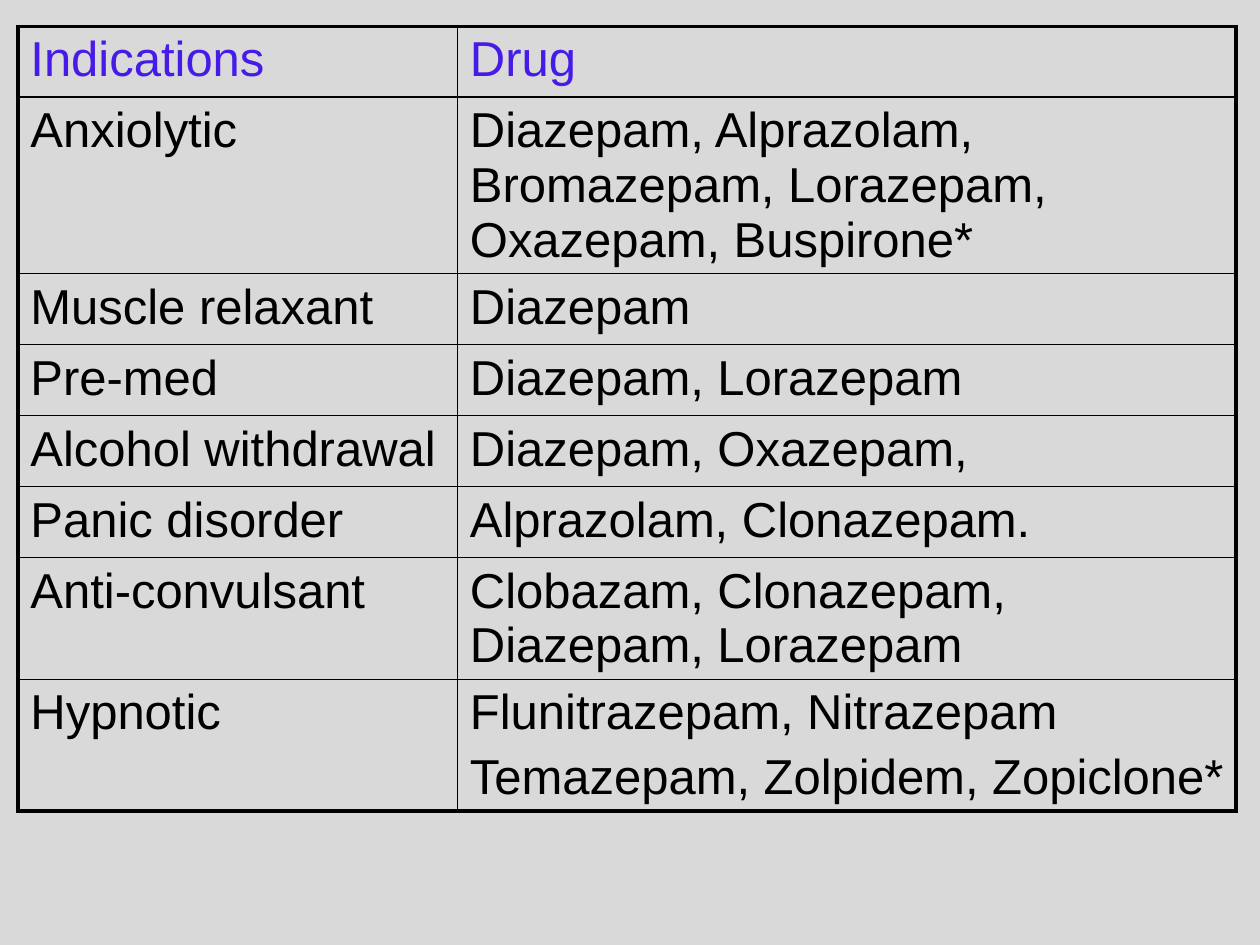
from lxml.etree import SubElement
from pptx import Presentation
from pptx.dml.color import RGBColor
from pptx.oxml.ns import qn
from pptx.util import Cm, Pt

GREY = RGBColor(0xD9, 0xD9, 0xD9)
BLACK = RGBColor(0, 0, 0)
VIOLET = RGBColor(0x47, 0x1B, 0xE7)
THIN, THICK = Pt(1), Pt(2.25)

ROWS = [
    ("Indications", "Drug"),
    ("Anxiolytic", "Diazepam, Alprazolam, Bromazepam, Lorazepam, Oxazepam, Buspirone*"),
    ("Muscle relaxant", "Diazepam"),
    ("Pre-med", "Diazepam, Lorazepam"),
    ("Alcohol withdrawal", "Diazepam, Oxazepam,"),
    ("Panic disorder", "Alprazolam, Clonazepam."),
    ("Anti-convulsant", "Clobazam, Clonazepam, Diazepam, Lorazepam"),
    ("Hypnotic", "Flunitrazepam, Nitrazepam\nTemazepam, Zolpidem, Zopiclone*"),
]
COL_WIDTHS = [Cm(8.86), Cm(15.7)]
ROW_HEIGHT = Cm(1.43)


def add_border(cell, side, width):
    """Draw one side (L, R, T or B, called in that order) of a cell."""
    ln = SubElement(cell._tc.get_or_add_tcPr(), qn(f"a:ln{side}"), w=str(width))
    fill = SubElement(ln, qn("a:solidFill"))
    SubElement(fill, qn("a:srgbClr"), val=str(BLACK))


prs = Presentation()
prs.slide_width, prs.slide_height = Cm(25.4), Cm(19.05)
s = prs.slides.add_slide(prs.slide_layouts[6])
s.background.fill.solid()
s.background.fill.fore_color.rgb = GREY

table = s.shapes.add_table(len(ROWS), len(COL_WIDTHS), Cm(0.36), Cm(0.53),
                           sum(COL_WIDTHS), ROW_HEIGHT * len(ROWS)).table
table.first_row = False
table.horz_banding = False
for column, width in zip(table.columns, COL_WIDTHS):
    column.width = width

for i, texts in enumerate(ROWS):
    table.rows[i].height = ROW_HEIGHT
    for j, text in enumerate(texts):
        cell = table.cell(i, j)
        cell.text_frame.text = text
        for p in cell.text_frame.paragraphs:
            p.space_before = Pt(5.6)
            for r in p.runs:
                r.font.name = "Arial"
                r.font.size = Pt(28)
                r.font.color.rgb = VIOLET if i == 0 else BLACK
        outer_sides = {"L": j == 0, "R": j == len(COL_WIDTHS) - 1,
                       "T": i == 0, "B": i == len(ROWS) - 1}
        for side, is_outer in outer_sides.items():
            add_border(cell, side, THICK if is_outer else THIN)
        cell.fill.background()

prs.save("out.pptx")
